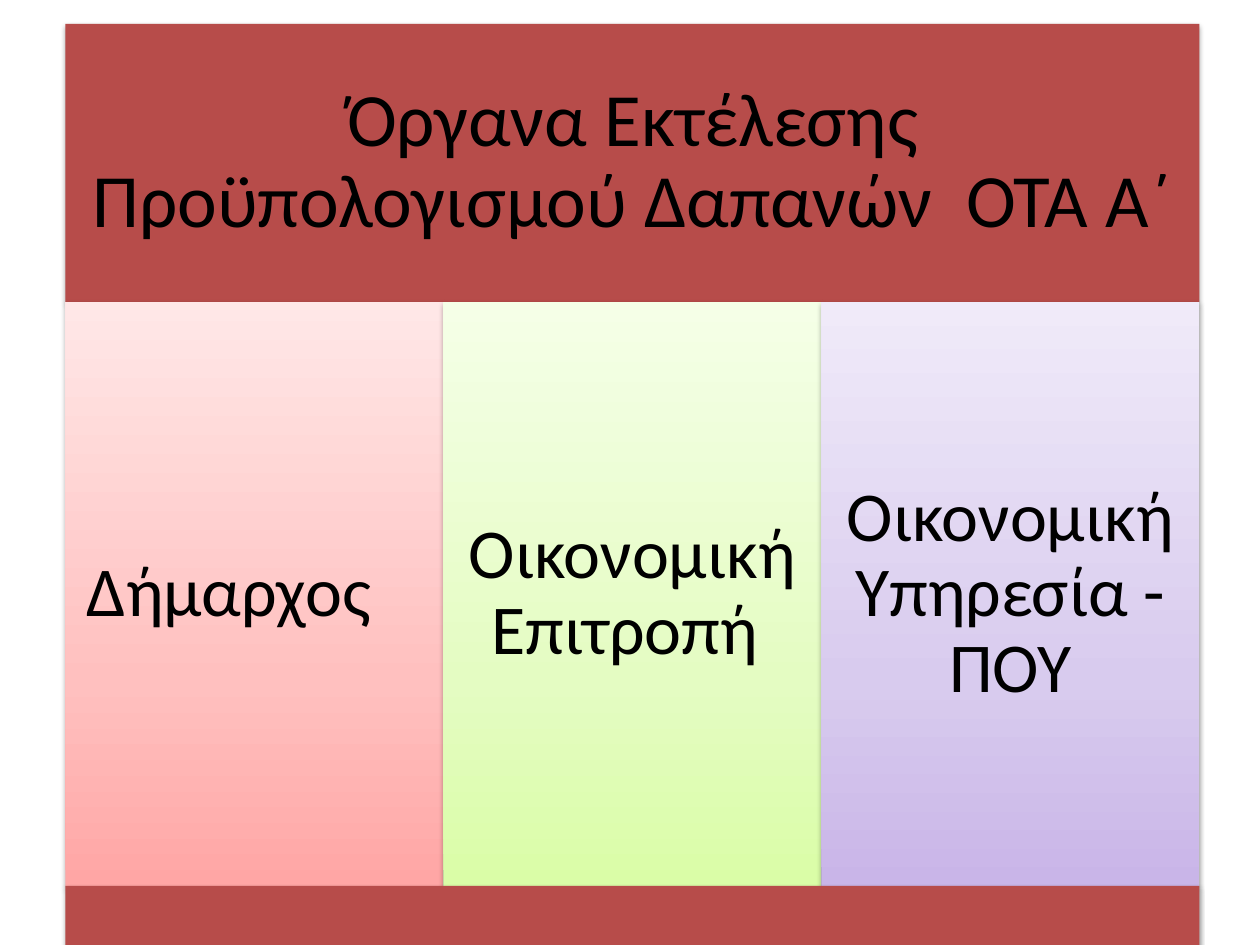
from dataclasses import dataclass

import lxml.etree
import pptx
import pptx.dml.color
import pptx.enum.shapes
import pptx.enum.text
import pptx.oxml.ns
import pptx.shapes.autoshape
import pptx.slide
import pptx.util

RGBColor = pptx.dml.color.RGBColor
Cm = pptx.util.Cm
Pt = pptx.util.Pt
Align = pptx.enum.text.PP_ALIGN

BRICK = RGBColor(0xB7, 0x4C, 0x4A)
BLACK = RGBColor(0, 0, 0)
REDS = (RGBColor(0xFF, 0xA6, 0xA5), RGBColor(0xFF, 0xC0, 0xBF), RGBColor(0xFF, 0xE7, 0xE7))
GREENS = (RGBColor(0xDA, 0xFD, 0xA7), RGBColor(0xE4, 0xFC, 0xC2), RGBColor(0xF5, 0xFF, 0xE7))
PURPLES = (RGBColor(0xC9, 0xB5, 0xE8), RGBColor(0xD8, 0xCB, 0xEE), RGBColor(0xF0, 0xEA, 0xF9))
STOPS = (0, 35, 100)  # percent, from the bottom up

LEFT, WIDTH = Cm(1.32), Cm(22.86)
HEADER_TOP, HEADER_HEIGHT = Cm(0.48), Cm(5.61)
COLUMN_TOP, COLUMN_HEIGHT = HEADER_TOP + HEADER_HEIGHT, Cm(11.77)
FOOTER_HEIGHT = Cm(1.3)


@dataclass
class Column:
    text: str
    shades: tuple[RGBColor, RGBColor, RGBColor]
    alignment: Align = Align.CENTER


COLUMNS = [
    Column("Δήμαρχος", REDS, Align.LEFT),
    Column("Οικονομική Επιτροπή ", GREENS),
    Column("Οικονομική Υπηρεσία - ΠΟΥ", PURPLES),
]


def add_element(parent, tag: str, **attributes: str):
    return lxml.etree.SubElement(parent, pptx.oxml.ns.qn(tag), attributes)


def add_color(parent, color: RGBColor):
    return add_element(parent, "a:srgbClr", val=str(color))


def finish_box(box: pptx.shapes.autoshape.Shape) -> None:
    """Remove the outline and set a soft shadow below the box."""
    box.line.fill.background()
    box.shadow.inherit = False
    effects = box.element.spPr.find(pptx.oxml.ns.qn("a:effectLst"))
    shadow = add_element(effects, "a:outerShdw", blurRad=str(Pt(3.1)),
                         dist=str(Pt(1.6)), dir="5400000", rotWithShape="0")
    add_element(add_color(shadow, BLACK), "a:alpha", val="38000")


def fill_solid(box: pptx.shapes.autoshape.Shape, color: RGBColor) -> None:
    box.fill.solid()
    box.fill.fore_color.rgb = color


def fill_gradient(box: pptx.shapes.autoshape.Shape, shades: tuple[RGBColor, ...]) -> None:
    box.fill.gradient()
    box.fill.gradient_angle = 90
    stops = box.element.spPr.find(".//" + pptx.oxml.ns.qn("a:gsLst"))
    for stop in list(stops):
        stops.remove(stop)
    for percent, shade in zip(STOPS, shades):
        add_color(add_element(stops, "a:gs", pos=str(percent * 1000)), shade)


def write_text(box: pptx.shapes.autoshape.Shape, text: str, size: int,
               inset: float, alignment: Align) -> None:
    frame = box.text_frame
    frame.text = text
    frame.word_wrap = True
    frame.auto_size = pptx.enum.text.MSO_AUTO_SIZE.NONE
    frame.vertical_anchor = pptx.enum.text.MSO_ANCHOR.MIDDLE
    frame.margin_left = frame.margin_right = Cm(inset)
    frame.margin_top = frame.margin_bottom = Cm(inset)
    para = frame.paragraphs[0]
    para.alignment = alignment
    para.line_spacing = 0.9
    para.font.name = "Calibri"
    para.font.size = Pt(size)
    para.font.color.rgb = BLACK


def add_box(page: pptx.slide.Slide, left: int, top: int, width: int,
            height: int) -> pptx.shapes.autoshape.Shape:
    return page.shapes.add_shape(pptx.enum.shapes.MSO_SHAPE.RECTANGLE,
                                 left, top, width, height)


def main() -> None:
    deck = pptx.Presentation()
    deck.slide_width, deck.slide_height = Cm(25.4), Cm(19.05)
    page = deck.slides.add_slide(deck.slide_layouts[5])

    # Header band
    title = page.shapes.title
    title.left, title.top = LEFT, HEADER_TOP
    title.width, title.height = WIDTH, HEADER_HEIGHT
    fill_solid(title, BRICK)
    finish_box(title)
    write_text(title, "Όργανα Εκτέλεσης Προϋπολογισμού Δαπανών  ΟΤΑ Α΄", 43, 0.46,
               Align.CENTER)

    # Three equal columns
    column_width = WIDTH // len(COLUMNS)
    for index, column in enumerate(COLUMNS):
        box = add_box(page, LEFT + index * column_width, COLUMN_TOP,
                      column_width, COLUMN_HEIGHT)
        fill_gradient(box, column.shades)
        finish_box(box)
        write_text(box, column.text, 40, 0.43, column.alignment)

    # Footer band
    footer = add_box(page, LEFT, COLUMN_TOP + COLUMN_HEIGHT, WIDTH, FOOTER_HEIGHT)
    fill_solid(footer, BRICK)
    finish_box(footer)

    deck.save("out.pptx")


if __name__ == "__main__":
    main()
